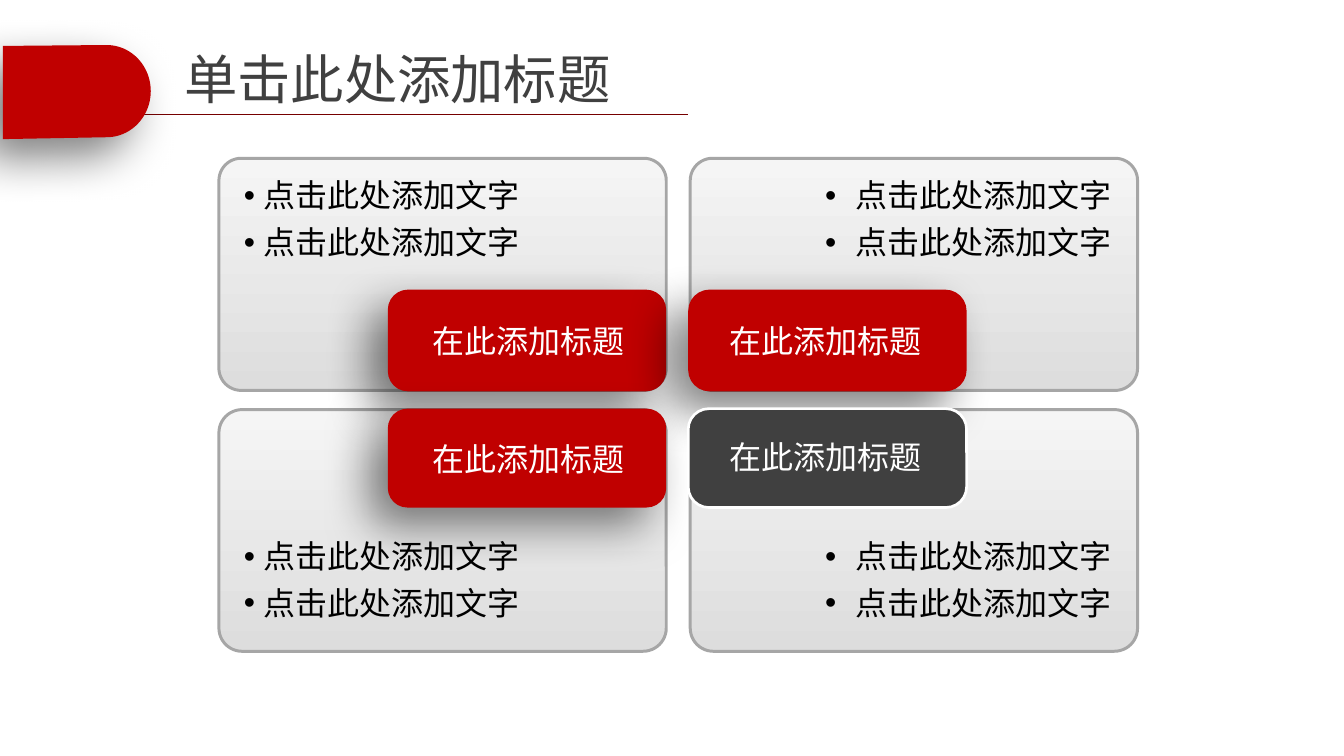
from math import cos, pi, sin

from lxml.etree import SubElement
from pptx import Presentation
from pptx.dml.color import RGBColor
from pptx.enum.shapes import MSO_CONNECTOR, MSO_SHAPE
from pptx.enum.text import MSO_ANCHOR, PP_ALIGN
from pptx.oxml.ns import qn
from pptx.util import Pt

RED = RGBColor(0xC0, 0x00, 0x00)
DARK_RED = RGBColor(0x76, 0x00, 0x00)
CHARCOAL = RGBColor(0x40, 0x40, 0x40)
GREY = RGBColor(0xA6, 0xA6, 0xA6)
PALE_TOP = RGBColor(0xF5, 0xF5, 0xF5)
PALE_BOTTOM = RGBColor(0xDD, 0xDD, 0xDD)
WHITE = RGBColor(0xFF, 0xFF, 0xFF)
BLACK = RGBColor(0x00, 0x00, 0x00)

CJK_FONT = "Noto Sans CJK SC"
TITLE = "单击此处添加标题"
LABEL = "在此添加标题"
NOTES = ["点击此处添加文字"] * 2


def add_shadow(shape):
    """Give the shape a soft black shadow towards the lower left."""
    effects = shape._element.spPr.find(qn("a:effectLst"))
    shadow = SubElement(effects, qn("a:outerShdw"), blurRad=str(Pt(35)),
                        dist=str(Pt(20)), dir="8100000", algn="tr", rotWithShape="0")
    color = SubElement(shadow, qn("a:srgbClr"), val="000000")
    SubElement(color, qn("a:alpha"), val="50000")


def add_text(slide, box, lines, size=24, color=BLACK, font=CJK_FONT,
             align=PP_ALIGN.LEFT, anchor=MSO_ANCHOR.TOP, insets=(7.2, 3.6),
             bullet_indent=0, spacing=None, space_before=0):
    """Place lines of text in a box of points, with optional bullets."""
    shape = slide.shapes.add_textbox(*map(Pt, box))
    frame = shape.text_frame
    frame.word_wrap = True
    frame.vertical_anchor = anchor
    frame.margin_left = frame.margin_right = Pt(insets[0])
    frame.margin_top = frame.margin_bottom = Pt(insets[1])
    for index, line in enumerate(lines):
        paragraph = frame.paragraphs[0] if index == 0 else frame.add_paragraph()
        paragraph.alignment = align
        if spacing:
            paragraph.line_spacing = spacing
        if index and space_before:
            paragraph.space_before = Pt(space_before)
        if bullet_indent:
            properties = paragraph._p.get_or_add_pPr()
            properties.set("marL", str(Pt(bullet_indent)))
            properties.set("indent", str(-Pt(bullet_indent)))
            SubElement(properties, qn("a:buFont"), typeface="Arial")
            SubElement(properties, qn("a:buChar"), char="•")
        run = paragraph.add_run()
        run.text = line
        run.font.size = Pt(size)
        run.font.color.rgb = color
        run.font.name = font
        if font == CJK_FONT:
            SubElement(run._r.get_or_add_rPr(), qn("a:ea"), typeface=font)


def add_rounded(slide, box, radius):
    """Add a rounded rectangle without a shadow."""
    shape = slide.shapes.add_shape(MSO_SHAPE.ROUNDED_RECTANGLE, *map(Pt, box))
    shape.adjustments[0] = radius
    shape.shadow.inherit = False
    return shape


def add_header(slide, left, top, width, height):
    """Draw the red tab, the rule and the title."""
    rule = slide.shapes.add_connector(
        MSO_CONNECTOR.STRAIGHT, Pt(66.2), Pt(85.7), Pt(516.2), Pt(85.7))
    rule.line.color.rgb = DARK_RED
    rule.line.width = Pt(0.75)
    SubElement(rule._element.spPr, qn("a:effectLst"))

    radius_x, radius_y = 33.1, height / 2 - 0.7
    center_x, center_y = left + width - radius_x, top + radius_y
    angles = [pi * (step / 48 - 0.5) for step in range(49)]
    arc = [(Pt(center_x + radius_x * cos(angle)), Pt(center_y + radius_y * sin(angle)))
           for angle in angles]
    builder = slide.shapes.build_freeform(Pt(left), Pt(top + 0.7))
    builder.add_line_segments(arc + [(Pt(left), Pt(top + height))], close=True)
    tab = builder.convert_to_shape()
    tab.fill.solid()
    tab.fill.fore_color.rgb = RED
    tab.line.fill.background()
    tab.shadow.inherit = False
    add_shadow(tab)

    add_text(slide, (129.6, 23, 681.8, 71.3), [TITLE], size=40, color=CHARCOAL,
             font="Arial", anchor=MSO_ANCHOR.MIDDLE, insets=(8.6, 4.3))


def add_panel(slide, box):
    """Draw a pale gradient panel."""
    panel = add_rounded(slide, box, 0.096)
    panel.fill.gradient()
    panel.fill.gradient_angle = 270
    for stop, color, position in zip(panel.fill.gradient_stops,
                                     (PALE_TOP, PALE_BOTTOM), (0, 1)):
        stop.color.rgb = color
        stop.position = position
    panel.line.color.rgb = GREY
    panel.line.width = Pt(2.25)


def add_tile(slide, box, radius, label_offset, dark):
    """Draw a heading tile with its centred label."""
    left, top, width, height = box
    tile = add_rounded(slide, box, radius)
    tile.fill.solid()
    tile.fill.fore_color.rgb = CHARCOAL if dark else RED
    if dark:
        tile.line.color.rgb = WHITE
        tile.line.width = Pt(2)
    else:
        tile.line.fill.background()
        add_shadow(tile)
    label_top = top + (height - 38.9) / 2 + (-1 if dark else 0.5)
    add_text(slide, (left + label_offset, label_top, 187.9, 38.9), [LABEL],
             color=WHITE, align=PP_ALIGN.CENTER, anchor=MSO_ANCHOR.MIDDLE)


def add_notes(slide, box, align, indent):
    """Write the bulleted notes of one panel."""
    add_text(slide, box, NOTES, align=align, insets=(10.1, 5),
             bullet_indent=indent, spacing=0.9, space_before=9)


def add_quadrants(slide, left, top):
    """Lay out two by two panels, their tiles and their notes."""
    panel_rows = [(top, 174.2), (top + 188.6, 181.4)]
    tile_rows = [(top + 98.6, 76.3), (top + 187.9, 74.2)]
    tile_columns = [(left + 126.7, 0.198, 11.5), (left + 352, 0.209, 8.6)]
    note_columns = [(left + 8.6, PP_ALIGN.LEFT, 14.4),
                    (left + 407.5, PP_ALIGN.RIGHT, 23)]
    for panel_top, height in panel_rows:
        for panel_left in (left, left + 353.5):
            add_panel(slide, (panel_left, panel_top, 335.5, height))
    for row, (tile_top, height) in enumerate(tile_rows):
        for column, (tile_left, radius, offset) in enumerate(tile_columns):
            add_tile(slide, (tile_left, tile_top, 208.8, height), radius, offset,
                     dark=row == column == 1)
    for note_left, align, indent in note_columns:
        for note_top in (top + 11.5, top + 282.2):
            add_notes(slide, (note_left, note_top, 272.2, 82.8), align, indent)


def main():
    """Build and save the slide."""
    presentation = Presentation()
    presentation.slide_width = Pt(1008)
    presentation.slide_height = Pt(567.36)
    slide = presentation.slides.add_slide(presentation.slide_layouts[6])
    add_header(slide, 2.2, 33.8, 110.9, 70.6)
    add_quadrants(slide, 164.2, 118.8)
    presentation.save("out.pptx")


if __name__ == "__main__":
    main()
